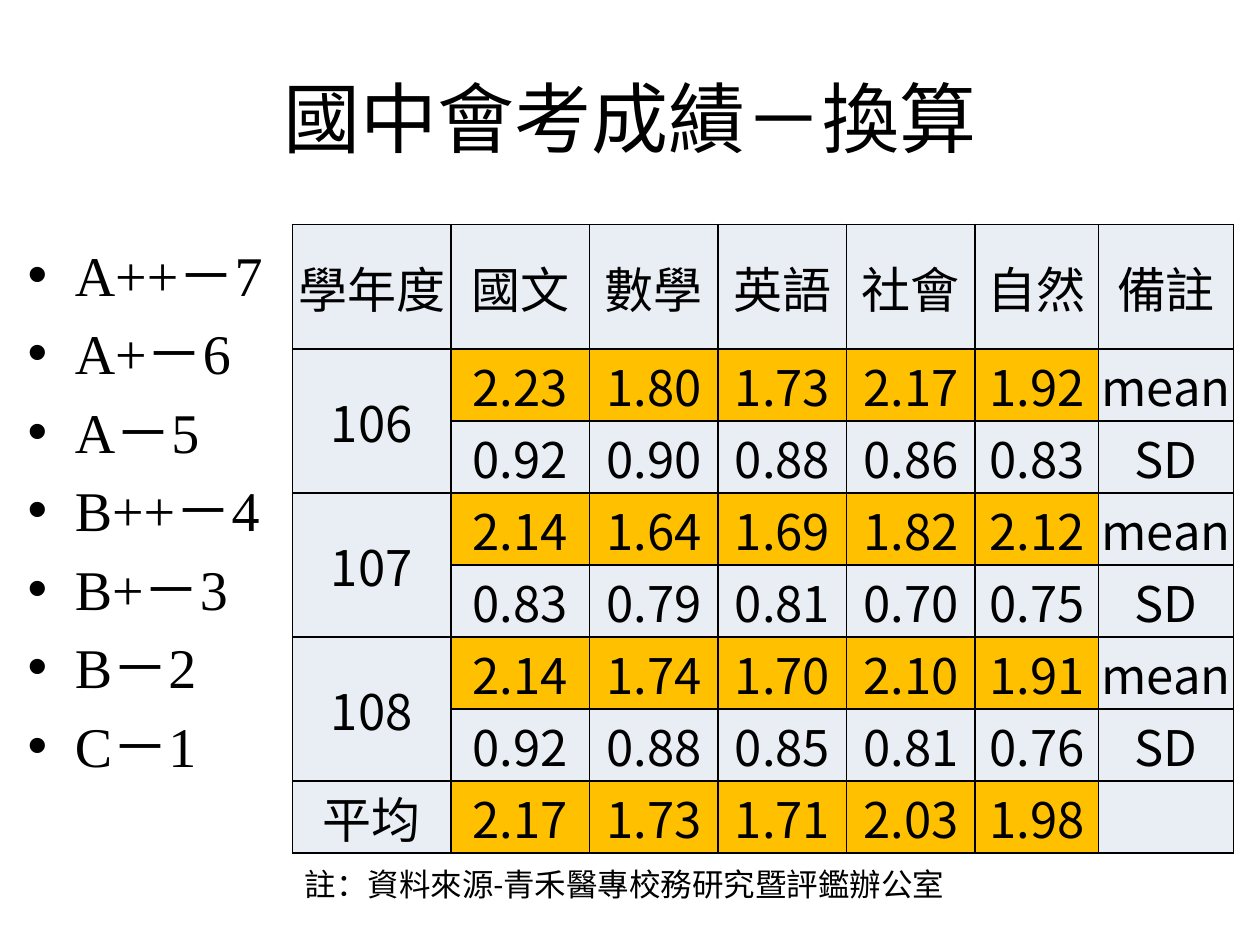
from lxml.etree import SubElement
from pptx import Presentation
from pptx.dml.color import RGBColor
from pptx.enum.text import MSO_ANCHOR, PP_ALIGN
from pptx.oxml.ns import qn
from pptx.util import Pt

HUES = {"ink": "000000", "pale": "E9EDF4", "gold": "FFC000"}
GRADES = ["A++－7", "A+－6", "A－5", "B++－4", "B+－3", "B－2", "C－1"]
COLS = [90.72, 79.2, 73.44, 73.44, 73.44, 70.56, 77.04]
ROWS = [71.28] + [41.14] * 7
DATA = [
    ["學年度", "國文", "數學", "英語", "社會", "自然", "備註"],
    ["106", "2.23", "1.80", "1.73", "2.17", "1.92", "mean"],
    ["", "0.92", "0.90", "0.88", "0.86", "0.83", "SD"],
    ["107", "2.14", "1.64", "1.69", "1.82", "2.12", "mean"],
    ["", "0.83", "0.79", "0.81", "0.70", "0.75", "SD"],
    ["108", "2.14", "1.74", "1.70", "2.10", "1.91", "mean"],
    ["", "0.92", "0.88", "0.85", "0.81", "0.76", "SD"],
    ["平均", "2.17", "1.73", "1.71", "2.03", "1.98", ""],
]


def hue(name):
    return RGBColor.from_string(HUES[name])


def style(para, face, size, align=PP_ALIGN.LEFT):
    para.alignment = align
    para.font.name = face
    para.font.size = Pt(size)
    para.font.color.rgb = hue("ink")


def add_text(slide, box, lines, face, size, align=PP_ALIGN.LEFT, anchor=MSO_ANCHOR.TOP):
    frame = slide.shapes.add_textbox(*map(Pt, box)).text_frame
    frame.word_wrap = True
    frame.vertical_anchor = anchor
    frame.text = "\n".join(lines)
    for para in frame.paragraphs:
        style(para, face, size, align)
    return frame


def add_bullet(para):
    props = para._p.get_or_add_pPr()
    props.set("marL", str(Pt(27)))
    props.set("indent", str(-Pt(27)))
    space = SubElement(props, qn("a:spcBef"))
    SubElement(space, qn("a:spcPct"), val="20000")
    SubElement(props, qn("a:buFont"), typeface="Arial")
    SubElement(props, qn("a:buChar"), char="•")
    props.append(props.find(qn("a:defRPr")))


def add_edges(cell):
    props = cell._tc.get_or_add_tcPr()
    for spot, side in enumerate(("lnL", "lnR", "lnT", "lnB")):
        line = SubElement(props, qn(f"a:{side}"), w=str(Pt(1)))
        fill = SubElement(line, qn("a:solidFill"))
        SubElement(fill, qn("a:srgbClr"), val=HUES["ink"])
        props.insert(spot, line)


def fill_cell(cell, text, tint):
    cell.text = text
    cell.vertical_anchor = MSO_ANCHOR.MIDDLE
    cell.margin_left = cell.margin_right = cell.margin_top = Pt(0.72)
    cell.margin_bottom = 0
    cell.fill.solid()
    cell.fill.fore_color.rgb = hue(tint)
    style(cell.text_frame.paragraphs[0], "Noto Sans CJK SC", 28, PP_ALIGN.CENTER)
    add_edges(cell)


def add_scores(slide):
    box = map(Pt, (167.04, 128.16, sum(COLS), sum(ROWS)))
    table = slide.shapes.add_table(len(ROWS), len(COLS), *box).table
    for col, width in zip(table.columns, COLS):
        col.width = Pt(width)
    for row, height in zip(table.rows, ROWS):
        row.height = Pt(height)
    for y, line in enumerate(DATA):
        for x, text in enumerate(line):
            tint = "gold" if y % 2 and 0 < x < 6 else "pale"
            fill_cell(table.cell(y, x), text, tint)
    for y in (1, 3, 5):
        table.cell(y, 0).merge(table.cell(y + 1, 0))


def main():
    deck = Presentation()
    deck.slide_width, deck.slide_height = Pt(720), Pt(540)
    slide = deck.slides.add_slide(deck.slide_layouts[6])
    add_text(slide, (36, 21.6, 648, 90), ["國中會考成績－換算"],
             "Times New Roman", 44, PP_ALIGN.CENTER, MSO_ANCHOR.MIDDLE)
    grades = add_text(slide, (8.64, 133.92, 620.64, 354.96), GRADES, "Times New Roman", 32)
    for para in grades.paragraphs:
        add_bullet(para)
    add_scores(slide)
    add_text(slide, (167.04, 491.04, 383.76, 28.8),
             ["註：資料來源-青禾醫專校務研究暨評鑑辦公室"], "Calibri", 18)
    deck.save("out.pptx")


if __name__ == "__main__":
    main()
